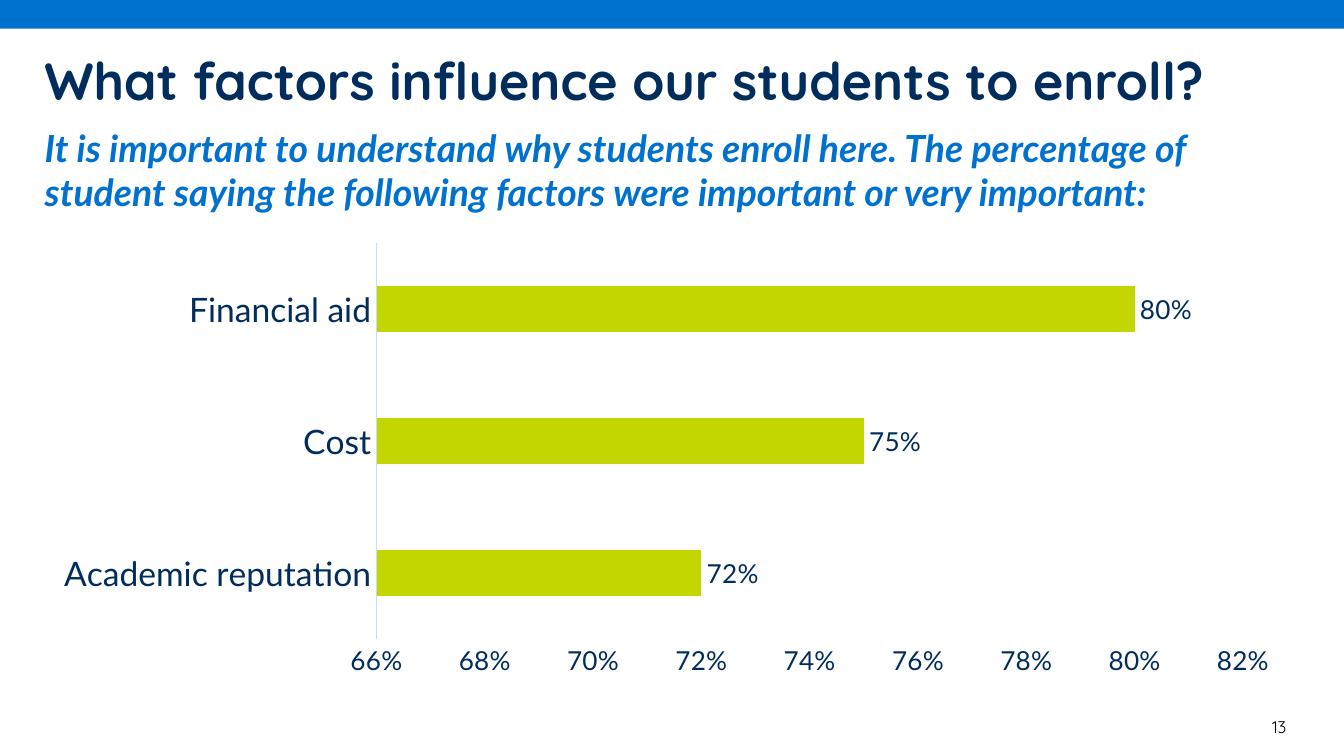
import pptx
import pptx.chart.data
import pptx.dml.color
import pptx.enum.chart
import pptx.enum.shapes
import pptx.enum.text
import pptx.util

WIDTH = pptx.util.Inches(10)
HEIGHT = WIDTH * 9 // 16
COLUMN, ROW = WIDTH / 100, HEIGHT / 100
COLORS = {"blue": "0071CE", "navy": "002D5C", "lime": "C3D600",
          "pale": "C0DFFF", "black": "000000"}
FACTORS = {"Academic reputation": 0.72, "Cost": 0.75, "Financial aid": 0.8}


def color(name):
    return pptx.dml.color.RGBColor.from_string(COLORS[name])


def grid_box(left, top, width, height):
    """Turn columns and rows, each a hundredth of the slide, into lengths."""
    return (round(left * COLUMN), round(top * ROW),
            round(width * COLUMN), round(height * ROW))


def style_font(font, face, size, tint, bold=False, italic=False):
    font.name = face
    font.size = pptx.util.Pt(size)
    font.color.rgb = color(tint)
    font.bold = bold
    font.italic = italic


def add_band(page, box):
    band = page.shapes.add_shape(pptx.enum.shapes.MSO_SHAPE.RECTANGLE, *box)
    band.shadow.inherit = False
    band.fill.solid()
    band.fill.fore_color.rgb = color("blue")
    band.line.fill.background()


def add_text(page, box, text, align="LEFT", anchor="TOP", inset=0, **style):
    frame = page.shapes.add_textbox(*box).text_frame
    frame.word_wrap = True
    frame.margin_left = frame.margin_right = pptx.util.Inches(inset)
    frame.margin_top = frame.margin_bottom = 0
    frame.vertical_anchor = getattr(pptx.enum.text.MSO_ANCHOR, anchor)
    para = frame.paragraphs[0]
    para.alignment = getattr(pptx.enum.text.PP_ALIGN, align)
    span = para.add_run()
    span.text = text
    style_font(span.font, **style)


def style_axis(axis, size):
    axis.has_major_gridlines = False
    axis.major_tick_mark = pptx.enum.chart.XL_TICK_MARK.NONE
    axis.minor_tick_mark = pptx.enum.chart.XL_TICK_MARK.NONE
    style_font(axis.tick_labels.font, "Lato", size, "navy")


def add_factor_chart(page, box):
    data = pptx.chart.data.CategoryChartData(number_format="0%")
    data.categories = list(FACTORS)
    data.add_series("Series 1", list(FACTORS.values()))
    chart = page.shapes.add_chart(
        pptx.enum.chart.XL_CHART_TYPE.BAR_CLUSTERED, *box, data).chart
    chart.has_legend = False
    chart.has_title = False
    style_font(chart.font, "Cambria", 10, "navy")

    category_axis, value_axis = chart.category_axis, chart.value_axis
    style_axis(category_axis, 18)
    category_axis.format.line.color.rgb = color("pale")
    category_axis.format.line.width = pptx.util.Pt(0.75)
    style_axis(value_axis, 14)
    value_axis.format.line.fill.background()
    value_axis.minimum_scale, value_axis.maximum_scale = 0.66, 0.82
    value_axis.major_unit = 0.02
    value_axis.tick_labels.number_format = "0%"
    value_axis.tick_labels.number_format_is_linked = False

    plot = chart.plots[0]
    plot.vary_by_categories = False
    plot.gap_width = 182
    bars = plot.series[0]
    bars.format.fill.solid()
    bars.format.fill.fore_color.rgb = color("lime")
    labels = bars.data_labels
    labels.show_value = True
    labels.number_format = "0%"
    labels.number_format_is_linked = False
    labels.position = pptx.enum.chart.XL_LABEL_POSITION.OUTSIDE_END
    style_font(labels.font, "Lato", 14, "navy")


def build_chart_page(page):
    add_band(page, grid_box(0, 0, 100, 3.8))
    add_text(page, grid_box(3.3, 6.4, 93.4, 8.4),
             "What factors influence our students to enroll?", anchor="MIDDLE",
             face="Quicksand", size=28, tint="navy", bold=True)
    add_text(page, grid_box(3.33, 16.5, 93.4, 12.6),
             "It is important to understand why students enroll here. "
             "The percentage of student saying the following factors were "
             "important or very important:",
             face="Lato", size=20, tint="blue", bold=True, italic=True)
    add_factor_chart(page, grid_box(2.9, 30.95, 93.4, 59.75))
    add_text(page, grid_box(91.3, 93.9, 5.4, 4.4), "13", align="RIGHT",
             anchor="MIDDLE", inset=0.1, face="Quicksand", size=9, tint="black")


def main():
    deck = pptx.Presentation()
    deck.slide_width, deck.slide_height = WIDTH, HEIGHT
    build_chart_page(deck.slides.add_slide(deck.slide_layouts[6]))
    deck.save("out.pptx")


if __name__ == "__main__":
    main()
